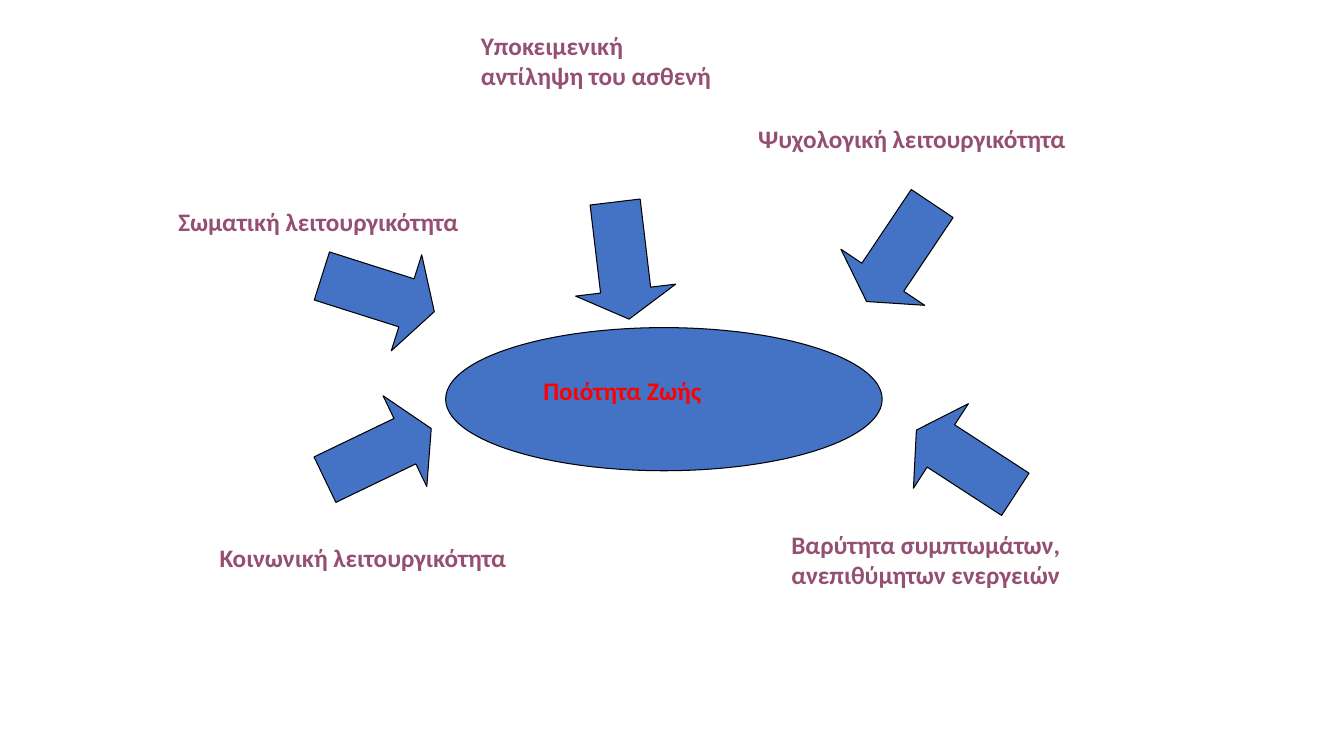
from pptx import Presentation
from pptx.dml.color import RGBColor
from pptx.enum.shapes import MSO_SHAPE
from pptx.enum.text import MSO_AUTO_SIZE
from pptx.util import Inches, Pt

COLORS = {"fill": "4472C4", "line": "000000", "core": "FF0000", "factor": "954F72"}

# Labels: text, colour, left, top, width, height
LABELS = [
    ("Ποιότητα Ζωής", "core", 5.29, 3.67, 2.75, 0.4),
    ("Σωματική λειτουργικότητα", "factor", 1.67, 2, 4.5, 0.4),
    ("Ψυχολογική λειτουργικότητα", "factor", 7.42, 1.17, 4.67, 0.4),
    ("Κοινωνική λειτουργικότητα", "factor", 2.08, 5.33, 4.25, 0.4),
    ("Βαρύτητα συμπτωμάτων, ανεπιθύμητων ενεργειών", "factor", 7.75, 5.2, 3.83, 0.71),
    ("Υποκειμενική αντίληψη του ασθενή", "factor", 4.67, 0.25, 2.58, 0.71),
]

# Arrows towards the centre: left, top, rotation
ARROWS = [
    (3.25, 3.92, 64.3),
    (3.25, 2.33, 107.6),
    (8.42, 1.92, 213.8),
    (9.08, 4, 303),
    (5.67, 2, 173.2),
]
ARROW_SIZE = (1, 1.17)
OVAL = (4.42, 3.25, 4.33, 1.42)


def color(name):
    return RGBColor.from_string(COLORS[name])


def add_solid(slide, kind, *box):
    shape = slide.shapes.add_shape(kind, *map(Inches, box))
    shape.shadow.inherit = False
    shape.fill.solid()
    shape.fill.fore_color.rgb = color("fill")
    shape.line.color.rgb = color("line")
    shape.line.width = Pt(0.75)
    return shape


def add_label(slide, text, tone, *box):
    frame = slide.shapes.add_textbox(*map(Inches, box)).text_frame
    frame.word_wrap = True
    frame.auto_size = MSO_AUTO_SIZE.SHAPE_TO_FIT_TEXT
    run = frame.paragraphs[0].add_run()
    run.text = text
    run.font.name = "Calibri"
    run.font.size = Pt(18)
    run.font.bold = True
    run.font.color.rgb = color(tone)


def main():
    deck = Presentation()
    deck.slide_width, deck.slide_height = Inches(13.33), Inches(7.5)
    slide = deck.slides.add_slide(deck.slide_layouts[6])

    # Central oval, with the labels over it
    add_solid(slide, MSO_SHAPE.OVAL, *OVAL)
    for label in LABELS:
        add_label(slide, *label)

    # Arrows
    for left, top, angle in ARROWS:
        arrow = add_solid(slide, MSO_SHAPE.UP_ARROW, left, top, *ARROW_SIZE)
        arrow.adjustments[0] = 0.5
        arrow.adjustments[1] = 0.29
        arrow.rotation = angle

    deck.save("out.pptx")


if __name__ == "__main__":
    main()
